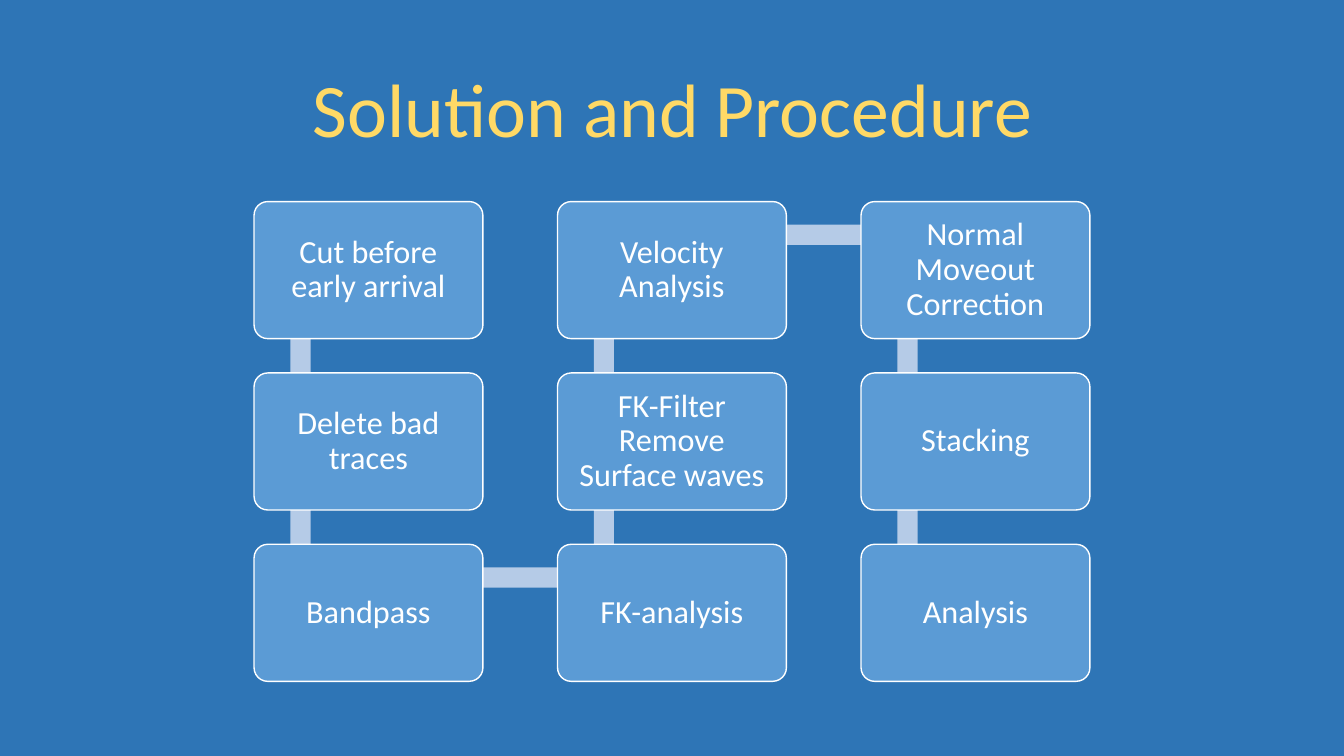
from pptx import Presentation
from pptx.dml.color import RGBColor
from pptx.enum.shapes import MSO_SHAPE
from pptx.enum.text import MSO_ANCHOR, MSO_AUTO_SIZE, PP_ALIGN
from pptx.util import Inches, Pt

BACKGROUND = RGBColor(0x2E, 0x75, 0xB6)
GOLD = RGBColor(0xFF, 0xD9, 0x66)
BOX_BLUE = RGBColor(0x5B, 0x9B, 0xD5)
BAR_BLUE = RGBColor(0xB5, 0xCB, 0xE7)
WHITE = RGBColor(0xFF, 0xFF, 0xFF)

LEFT, TOP = 2.52, 2.0
COL_STEP, ROW_STEP = 3.01, 1.7
BOX_W, BOX_H = 2.27, 1.36
BAR_X, BAR_Y, BAR_H = 0.46, 0.33, 0.2
COLUMNS = [
    ["Cut before early arrival", "Delete bad traces", "Bandpass"],
    ["Velocity Analysis", "FK-Filter Remove Surface waves", "FK-analysis"],
    ["Normal Moveout Correction", "Stacking", "Analysis"],
]


def add_block(kind, x, y, w, h, color):
    sp = s.shapes.add_shape(kind, Inches(x), Inches(y), Inches(w), Inches(h))
    sp.shadow.inherit = False
    sp.fill.solid()
    sp.fill.fore_color.rgb = color
    sp.line.fill.background()
    return sp


def set_text(sp, text, size, color):
    tf = sp.text_frame
    tf.text = text
    tf.word_wrap = True
    tf.auto_size = MSO_AUTO_SIZE.NONE
    tf.vertical_anchor = MSO_ANCHOR.MIDDLE
    p = tf.paragraphs[0]
    p.alignment = PP_ALIGN.CENTER
    p.line_spacing = 0.9
    font = p.runs[0].font
    for name, value in {"name": "Calibri", "size": Pt(size)}.items():
        setattr(font, name, value)
    font.color.rgb = color


prs = Presentation()
prs.slide_width, prs.slide_height = Inches(13.33), Inches(7.5)
s = prs.slides.add_slide(prs.slide_layouts[5])
s.background.fill.solid()
s.background.fill.fore_color.rgb = BACKGROUND

title = s.shapes.title
place = {"left": 0.92, "top": 0.4, "width": 11.5, "height": 1.45}
for name, value in place.items():
    setattr(title, name, Inches(value))
set_text(title, "Solution and Procedure", 54, GOLD)

steps = []
for col, labels in enumerate(COLUMNS):
    rows = list(enumerate(labels))
    if col % 2:
        rows.reverse()
    steps += [(col, row, label) for row, label in rows]

for i, (col, row, label) in enumerate(steps):
    x, y = LEFT + col * COL_STEP, TOP + row * ROW_STEP
    if i + 1 < len(steps):
        next_col, next_row, _ = steps[i + 1]
        dx, dy = (next_col - col) * COL_STEP, (next_row - row) * ROW_STEP
        length = abs(dx) + abs(dy)
        bar = add_block(MSO_SHAPE.RECTANGLE, x + BAR_X + (dx - length) / 2,
                        y + BAR_Y + (dy - BAR_H) / 2, length, BAR_H, BAR_BLUE)
        bar.rotation = 0 if dx else 90 if dy > 0 else 270

    box = add_block(MSO_SHAPE.ROUNDED_RECTANGLE, x, y, BOX_W, BOX_H, BOX_BLUE)
    box.adjustments[0] = 0.1
    box.line.color.rgb = WHITE
    box.line.width = Pt(1)
    for side in ("left", "top", "right", "bottom"):
        setattr(box.text_frame, f"margin_{side}", Inches(0.1))
    set_text(box, label, 23, WHITE)

prs.save("out.pptx")
